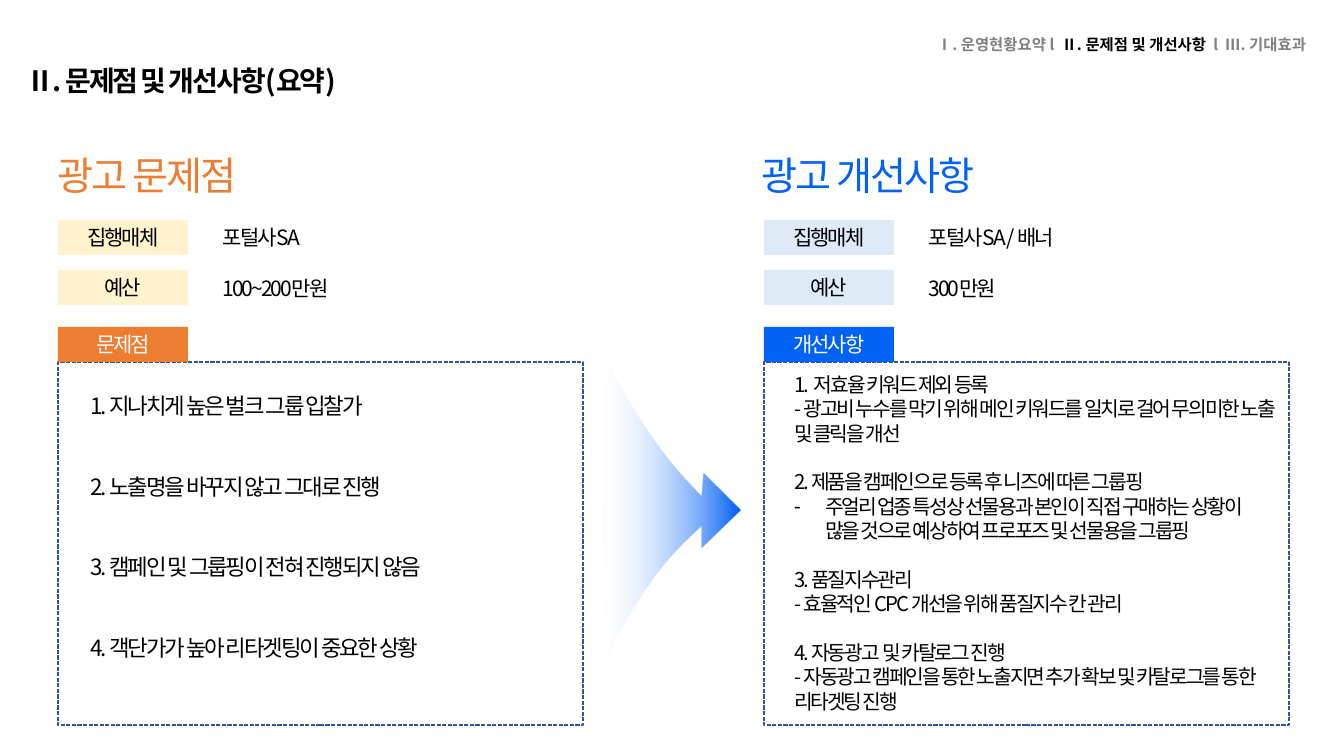
"""Build the summary slide that sets ad problems beside their fixes."""
from dataclasses import dataclass

import pptx
import pptx.dml.color
import pptx.enum.dml
import pptx.enum.shapes
import pptx.enum.text
import pptx.oxml
import pptx.oxml.ns
import pptx.util

WIDE, HIGH = 1344, 756
SCALE = 12192000 / WIDE
FONT = "Noto Sans CJK KR"
BLACK, WHITE, GRAY = "000000", "FFFFFF", "808080"
ORANGE, BLUE, NAVY = "ED7D31", "0162F5", "2F5597"
ALIGN = pptx.enum.text.PP_ALIGN
ANCHOR = pptx.enum.text.MSO_ANCHOR
qn = pptx.oxml.ns.qn


@dataclass
class Item:
    text: str
    gap: float = 0
    mark: str = ""


@dataclass
class Panel:
    left: int
    head: str
    head_left: int
    head_wide: int
    tag: str
    color: str
    tint: str
    facts: tuple[tuple[str, str], ...]
    items: tuple[Item, ...]
    size: float
    area: tuple[int, int, int, int]


PANELS = (
    Panel(58, "광고 문제점", 48, 277, "문제점", ORANGE, "FFF2CC",
          (("집행매체", "포털사SA"), ("예산", "100~200만원")),
          (Item("1. 지나치게 높은 벌크 그룹 입찰가"),
           Item("2. 노출명을 바꾸지 않고 그대로 진행", 38.4),
           Item("3. 캠페인 및 그룹핑이 전혀 진행되지 않음", 38.4),
           Item("4. 객단가가 높아 리타겟팅이 중요한 상황", 38.4)),
          16, (80, 387, 486, 281)),
    Panel(764, "광고 개선사항", 752, 240, "개선사항", BLUE, "DEEBF7",
          (("집행매체", "포털사SA / 배너"), ("예산", "300만원")),
          (Item("1.  저효율 키워드 제외 등록"),
           Item("- 광고비 누수를 막기 위해 메인 키워드를 일치로 걸어 무의미한 노출 및 클릭을 개선"),
           Item("2. 제품을 캠페인으로 등록 후 니즈에 따른 그룹핑", 17.4),
           Item("주얼리 업종 특성상 선물용과 본인이 직접 구매하는 상황이 많을 것으로 "
                "예상하여 프로포즈 및 선물용을 그룹핑", mark="-"),
           Item("3. 품질지수관리", 17.4),
           Item("- 효율적인 CPC 개선을 위해 품질지수 칸 관리"),
           Item("4. 자동광고  및 카탈로그 진행", 17.4),
           Item("- 자동광고 캠페인을 통한 노출지면 추가 확보 및 카탈로그를 통한 리타겟팅 진행")),
          14.5, (784, 367, 502, 355)),
)


def px(count: int) -> int:
    return round(count * SCALE)


def rgb(code: str):
    return pptx.dml.color.RGBColor.from_string(code)


def place(shape, left: int, top: int, wide: int, high: int) -> None:
    shape.left, shape.top = px(left), px(top)
    shape.width, shape.height = px(wide), px(high)


def frame(shape, anchor=ANCHOR.MIDDLE):
    body = shape.text_frame
    body.word_wrap = True
    body.auto_size = pptx.enum.text.MSO_AUTO_SIZE.NONE
    body.vertical_anchor = anchor
    return body


def write(para, text: str, *, size: float, color: str = BLACK, bold: bool = False,
          align=ALIGN.LEFT) -> None:
    para.alignment = align
    run = para.add_run()
    run.text = text
    font = run.font
    font.size, font.bold, font.name = pptx.util.Pt(size), bold, FONT
    font.color.rgb = rgb(color)
    props = run._r.get_or_add_rPr()
    props.set("spc", "-150")
    east = pptx.oxml.parse_xml(f'<a:ea {pptx.oxml.ns.nsdecls("a")} typeface="{FONT}"/>')
    props.find(qn("a:latin")).addnext(east)


def add_box(slide, left: int, top: int, wide: int, high: int, fill: str = "",
            line: str = ""):
    kind = pptx.enum.shapes.MSO_SHAPE.RECTANGLE
    box = slide.shapes.add_shape(kind, px(left), px(top), px(wide), px(high))
    box.shadow.inherit = False
    if fill:
        box.fill.solid()
        box.fill.fore_color.rgb = rgb(fill)
    else:
        box.fill.background()
    if line:
        box.line.color.rgb = rgb(line)
        box.line.width = pptx.util.Pt(1)
        box.line.dash_style = pptx.enum.dml.MSO_LINE.SQUARE_DOT
    else:
        box.line.fill.background()
    return box


def add_text(slide, left: int, top: int, wide: int, high: int):
    return slide.shapes.add_textbox(px(left), px(top), px(wide), px(high))


def fill_list(holder, panel: Panel) -> None:
    place(holder, *panel.area)
    body = frame(holder, ANCHOR.TOP)
    for spot, item in enumerate(panel.items):
        para = body.add_paragraph() if spot else body.paragraphs[0]
        write(para, item.text, size=panel.size)
        para.space_before = pptx.util.Pt(item.gap)
        props = para._p.get_or_add_pPr()
        dent = px(31) if item.mark else 0
        props.set("marL", str(dent))
        props.set("indent", str(-dent))
        if item.mark:
            props.append(props.makeelement(qn("a:buChar"), {"char": item.mark}))
        else:
            props.append(props.makeelement(qn("a:buNone"), {}))


def add_panel(slide, panel: Panel, holder) -> None:
    add_box(slide, panel.left, 362, 525, 363, line=NAVY)
    fill_list(holder, panel)
    head = add_box(slide, panel.head_left, 146, panel.head_wide, 58, WHITE)
    write(frame(head).paragraphs[0], panel.head, size=28, color=panel.color)
    tag = add_box(slide, panel.left, 327, 130, 35, panel.color)
    write(frame(tag).paragraphs[0], panel.tag, size=15, color=WHITE, align=ALIGN.CENTER)
    for row, (name, value) in enumerate(panel.facts):
        top = 220 + 50 * row
        label = add_box(slide, panel.left, top, 130, 35, panel.tint)
        write(frame(label).paragraphs[0], name, size=15, align=ALIGN.CENTER)
        note = add_text(slide, panel.left + 155, top + row, 225, 35)
        write(frame(note).paragraphs[0], value, size=15)


def add_arrow(slide) -> None:
    spots = ((701, 526), (674, 551), (642, 582), (602, 668), (607, 362),
             (649, 440), (674, 468), (701, 496), (703, 473), (740, 510))
    build = slide.shapes.build_freeform(701, 548, scale=SCALE)
    build.add_line_segments(spots, close=True)
    arrow = build.convert_to_shape()
    arrow.shadow.inherit = False
    arrow.line.fill.background()
    lines = arrow._element.xpath(".//a:lnTo")
    for first in (1, 5):
        curve = lines[first]
        curve.tag = qn("a:cubicBezTo")
        for extra in lines[first + 1:first + 3]:
            curve.append(extra[0])
            extra.getparent().remove(extra)
    arrow.fill.gradient()
    arrow.fill.gradient_angle = 0
    for stop, color, spot in zip(arrow.fill.gradient_stops, (WHITE, BLUE), (0, 0.99)):
        stop.color.rgb = rgb(color)
        stop.position = spot
    clear = arrow._element.xpath(".//a:gs/a:srgbClr")[0]
    clear.append(clear.makeelement(qn("a:alpha"), {"val": "10000"}))


def main() -> None:
    deck = pptx.Presentation()
    deck.slide_width, deck.slide_height = px(WIDE), px(HIGH)
    slide = deck.slides.add_slide(deck.slide_layouts[3])
    title, *holders = list(slide.placeholders)[:3]
    place(title, 16, 58, 621, 44)
    write(frame(title).paragraphs[0], "Ⅱ. 문제점 및 개선사항(요약)", size=20, bold=True)
    trail = frame(add_text(slide, 517, 30, 799, 29), ANCHOR.TOP).paragraphs[0]
    for text, color in (("Ⅰ. 운영현황요약 l", GRAY), ("  Ⅱ. 문제점 및 개선사항  ", BLACK),
                        ("l  Ⅲ. 기대효과", GRAY)):
        write(trail, text, size=11, color=color, bold=True, align=ALIGN.RIGHT)
        trail.runs[-1]._r.rPr.attrib.pop("spc")
    for panel, holder in zip(PANELS, holders):
        add_panel(slide, panel, holder)
    add_arrow(slide)
    deck.save("out.pptx")


if __name__ == "__main__":
    main()
